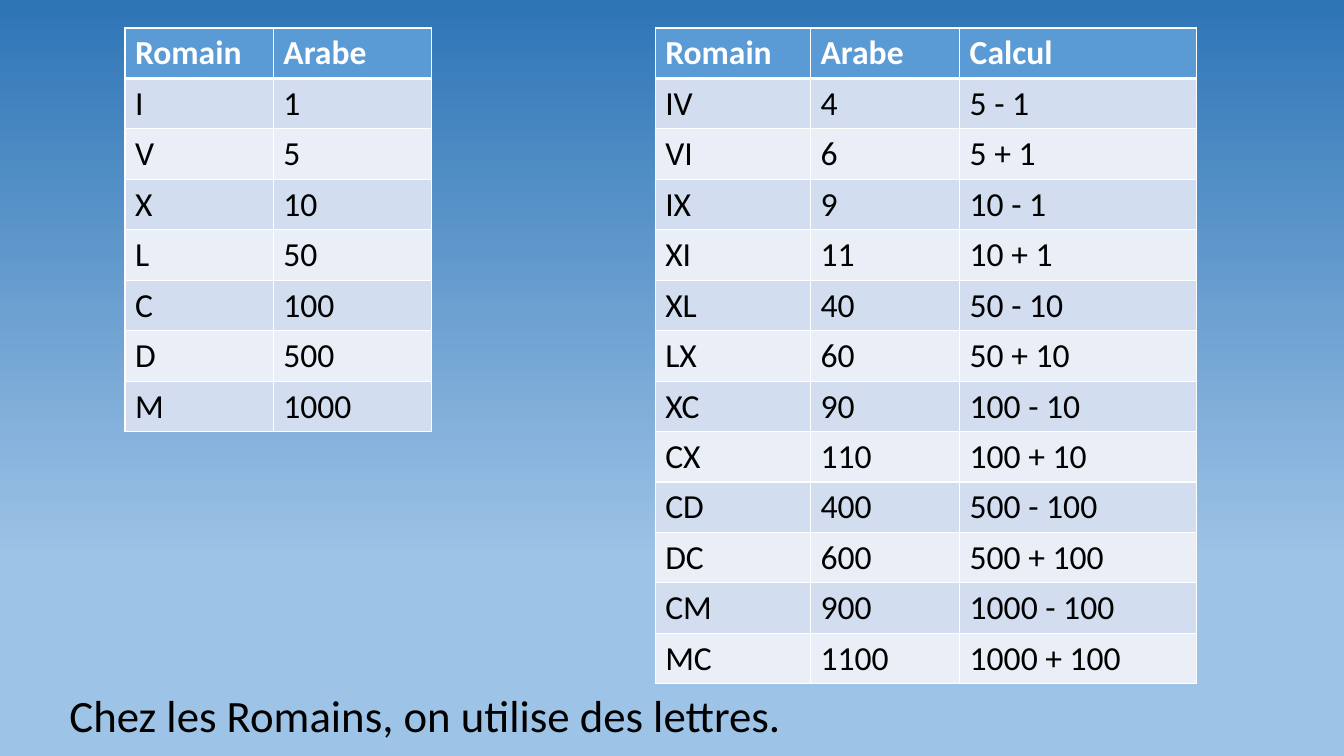
import pptx
import pptx.dml.color
import pptx.oxml
import pptx.oxml.ns
import pptx.util

Pt = pptx.util.Pt

BASICS = [
    ("Romain", "Arabe"),
    ("I", "1"),
    ("V", "5"),
    ("X", "10"),
    ("L", "50"),
    ("C", "100"),
    ("D", "500"),
    ("M", "1000"),
]
SUMS = [
    ("Romain", "Arabe", "Calcul"),
    ("IV", "4", "5 - 1"),
    ("VI", "6", "5 + 1"),
    ("IX", "9", "10 - 1"),
    ("XI", "11", "10 + 1"),
    ("XL", "40", "50 - 10"),
    ("LX", "60", "50 + 10"),
    ("XC", "90", "100 - 10"),
    ("CX", "110", "100 + 10"),
    ("CD", "400", "500 - 100"),
    ("DC", "600", "500 + 100"),
    ("CM", "900", "1000 - 100"),
    ("MC", "1100", "1000 + 100"),
]
ROW = 36
TOP = 20


def color(code):
    return pptx.dml.color.RGBColor.from_string(code)


def write(frame, text, size=24, ink="000000", bold=False):
    run = frame.paragraphs[0].add_run()
    run.text = text
    run.font.name = "Calibri"
    run.font.size = Pt(size)
    run.font.bold = bold
    run.font.color.rgb = color(ink)


def border(cell, side, width):
    """Draw a white edge; must come before the cell's fill."""
    space = pptx.oxml.ns.nsdecls("a")
    cell._tc.get_or_add_tcPr().append(pptx.oxml.parse_xml(
        f'<a:ln{side} {space} w="{Pt(width)}"><a:solidFill>'
        f'<a:srgbClr val="FFFFFF"/></a:solidFill></a:ln{side}>'))


def paint(cell, row):
    """Give a cell the borders and fill of its row."""
    top = 3 if row == 1 else 1
    bottom = 3 if row == 0 else 1
    for side, width in (("L", 1), ("R", 1), ("T", top), ("B", bottom)):
        border(cell, side, width)
    band = "D2DEEF" if row % 2 else "EAEFF7"
    cell.fill.solid()
    cell.fill.fore_color.rgb = color(band if row else "5B9BD5")


def add_grid(slide, left, widths, data):
    table = slide.shapes.add_table(
        len(data), len(widths), Pt(left), Pt(TOP),
        Pt(sum(widths)), Pt(ROW * len(data))).table
    table.horz_banding = False
    for column, width in zip(table.columns, widths):
        column.width = Pt(width)
    for row, texts in enumerate(data):
        head = row == 0
        for col, text in enumerate(texts):
            cell = table.cell(row, col)
            paint(cell, row)
            write(cell.text_frame, text, bold=head,
                  ink="FFFFFF" if head else "000000")


def add_text(slide, left, top, width, height, text, **style):
    frame = slide.shapes.add_textbox(
        Pt(left), Pt(top), Pt(width), Pt(height)).text_frame
    frame.word_wrap = True
    write(frame, text, **style)


def add_sky(slide):
    """Fill the background with blue, lighter towards the bottom."""
    fill = slide.background.fill
    fill.gradient()
    fill.gradient_angle = 270
    stops = ((0, "2E75B6"), (0.74, "9DC3E6"))
    for stop, (place, code) in zip(fill.gradient_stops, stops):
        stop.position = place
        stop.color.rgb = color(code)


def main():
    deck = pptx.Presentation()
    deck.slide_width = Pt(960)
    deck.slide_height = Pt(540)
    slide = deck.slides.add_slide(deck.slide_layouts[6])
    add_sky(slide)
    add_text(slide, 42.5, 488, 793.5, 46,
             "Chez les Romains, on utilise des lettres.", size=32)
    add_grid(slide, 89.3, (106, 113), BASICS)
    add_grid(slide, 468, (111, 106.5, 169), SUMS)
    deck.save("out.pptx")


if __name__ == "__main__":
    main()
